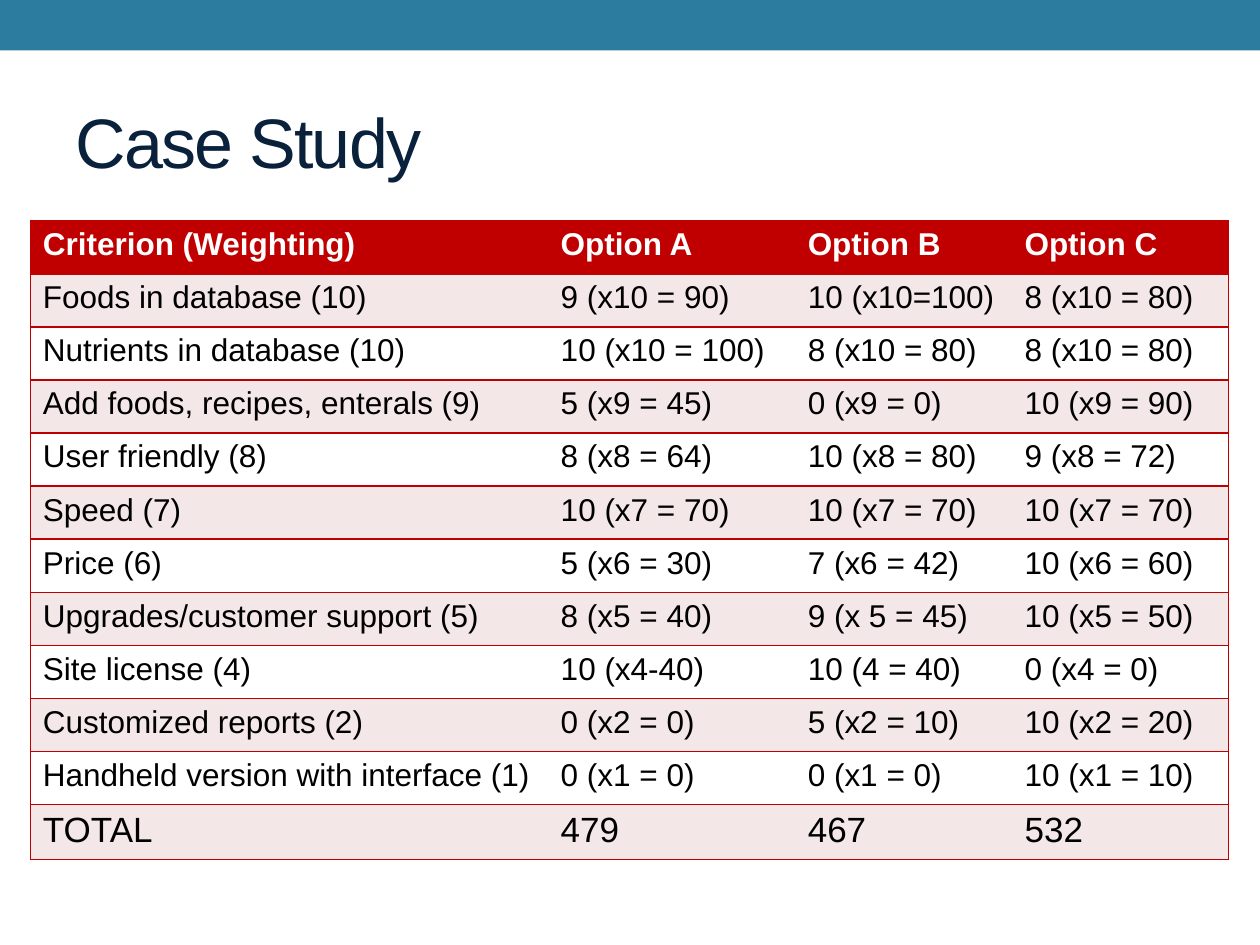
from typing import NamedTuple

from lxml.etree import SubElement
from pptx import Presentation
from pptx.dml.color import RGBColor
from pptx.enum.shapes import MSO_SHAPE
from pptx.enum.text import MSO_ANCHOR
from pptx.oxml.ns import qn
from pptx.util import Cm, Pt

FONT = "Arial"
BANNER_BLUE, TITLE_NAVY = "2C7C9F", "09213B"
RED, PINK, WHITE, BLACK = "C00000", "F4E7E7", "FFFFFF", "000000"
COLUMN_WIDTHS = (10.44, 4.98, 4.37, 4.37)
ROW_HEIGHT = 1.07


class Criterion(NamedTuple):
    label: str
    option_a: str
    option_b: str
    option_c: str


class RowStyle(NamedTuple):
    fill: str
    color: str = BLACK
    size: int = 18
    bold: bool = False


CRITERIA = [
    Criterion("Criterion (Weighting)", "Option A", "Option B", "Option C"),
    Criterion("Foods in database (10)", "9 (x10 = 90)", "10 (x10=100)", "8 (x10 = 80)"),
    Criterion("Nutrients in database (10)", "10 (x10 = 100)", "8 (x10 = 80)", "8 (x10 = 80)"),
    Criterion("Add foods, recipes, enterals (9)", "5 (x9 = 45)", "0 (x9 = 0)", "10 (x9 = 90)"),
    Criterion("User friendly (8)", "8 (x8 = 64)", "10 (x8 = 80)", "9 (x8 = 72)"),
    Criterion("Speed (7)", "10 (x7 = 70)", "10 (x7 = 70)", "10 (x7 = 70)"),
    Criterion("Price (6)", "5 (x6 = 30)", "7 (x6 = 42)", "10 (x6 = 60)"),
    Criterion("Upgrades/customer support (5)", "8 (x5 = 40)", "9 (x 5 = 45)", "10 (x5 = 50)"),
    Criterion("Site license (4)", "10 (x4-40)", "10 (4 = 40)", "0 (x4 = 0)"),
    Criterion("Customized reports (2)", "0 (x2 = 0)", "5 (x2 = 10)", "10 (x2 = 20)"),
    Criterion("Handheld version with interface (1)", "0 (x1 = 0)", "0 (x1 = 0)", "10 (x1 = 10)"),
    Criterion("TOTAL", "479", "467", "532"),
]


def paint(target, color: str) -> None:
    """Give a fill a solid colour."""
    target.solid()
    target.fore_color.rgb = RGBColor.from_string(color)


def write(frame, text: str, size: int, color: str, bold: bool = False):
    """Set the text of a frame and return its formatted run."""
    frame.text = text
    run = frame.paragraphs[0].runs[0]
    run.font.name, run.font.size, run.font.bold = FONT, Pt(size), bold
    paint(run.font.fill, color)
    return run


def add_borders(cell, visible_sides: str) -> None:
    """Rule the named sides of a cell in red and clear the others."""
    properties = cell._tc.get_or_add_tcPr()
    for side in "LRTB":
        line = SubElement(properties, qn(f"a:ln{side}"), w=str(Pt(1)))
        if side in visible_sides:
            solid = SubElement(line, qn("a:solidFill"))
            SubElement(solid, qn("a:srgbClr"), val=RED)
        else:
            SubElement(line, qn("a:noFill"))


def row_style(index: int) -> RowStyle:
    if index == 0:
        return RowStyle(RED, WHITE, bold=True)
    size = 20 if index == len(CRITERIA) - 1 else 18
    return RowStyle(PINK if index % 2 else WHITE, size=size)


def add_banner(slide) -> None:
    banner = slide.shapes.add_shape(MSO_SHAPE.RECTANGLE, 0, 0, Cm(25.4), Cm(1.02))
    banner.shadow.inherit = False
    paint(banner.fill, BANNER_BLUE)
    banner.line.fill.background()


def add_title(slide) -> None:
    title = slide.shapes.add_textbox(Cm(1.27), Cm(1.47), Cm(22.86), Cm(2.74))
    title.text_frame.word_wrap = True
    title.text_frame.vertical_anchor = MSO_ANCHOR.MIDDLE
    run = write(title.text_frame, "Case Study", 40, TITLE_NAVY)
    run.font._element.set("spc", "-100")


def add_scores(slide) -> None:
    rows, columns = len(CRITERIA), len(COLUMN_WIDTHS)
    scores = slide.shapes.add_table(
        rows, columns, Cm(0.61), Cm(4.45), Cm(sum(COLUMN_WIDTHS)), Cm(rows * ROW_HEIGHT)
    ).table
    scores.horz_banding = False
    for column, width in zip(scores.columns, COLUMN_WIDTHS):
        column.width = Cm(width)
    for r, criterion in enumerate(CRITERIA):
        scores.rows[r].height = Cm(ROW_HEIGHT)
        style = row_style(r)
        for c, text in enumerate(criterion):
            cell = scores.cell(r, c)
            outer_side = {0: "L", columns - 1: "R"}.get(c, "")
            add_borders(cell, "TB" + outer_side)
            paint(cell.fill, style.fill)
            write(cell.text_frame, text, style.size, style.color, style.bold)


def main() -> None:
    deck = Presentation()
    deck.slide_width, deck.slide_height = Cm(25.4), Cm(19.05)
    slide = deck.slides.add_slide(deck.slide_layouts[6])
    paint(slide.background.fill, WHITE)

    # Banner and heading
    add_banner(slide)
    add_title(slide)

    # Weighted scores of the options
    add_scores(slide)

    deck.save("out.pptx")


if __name__ == "__main__":
    main()
